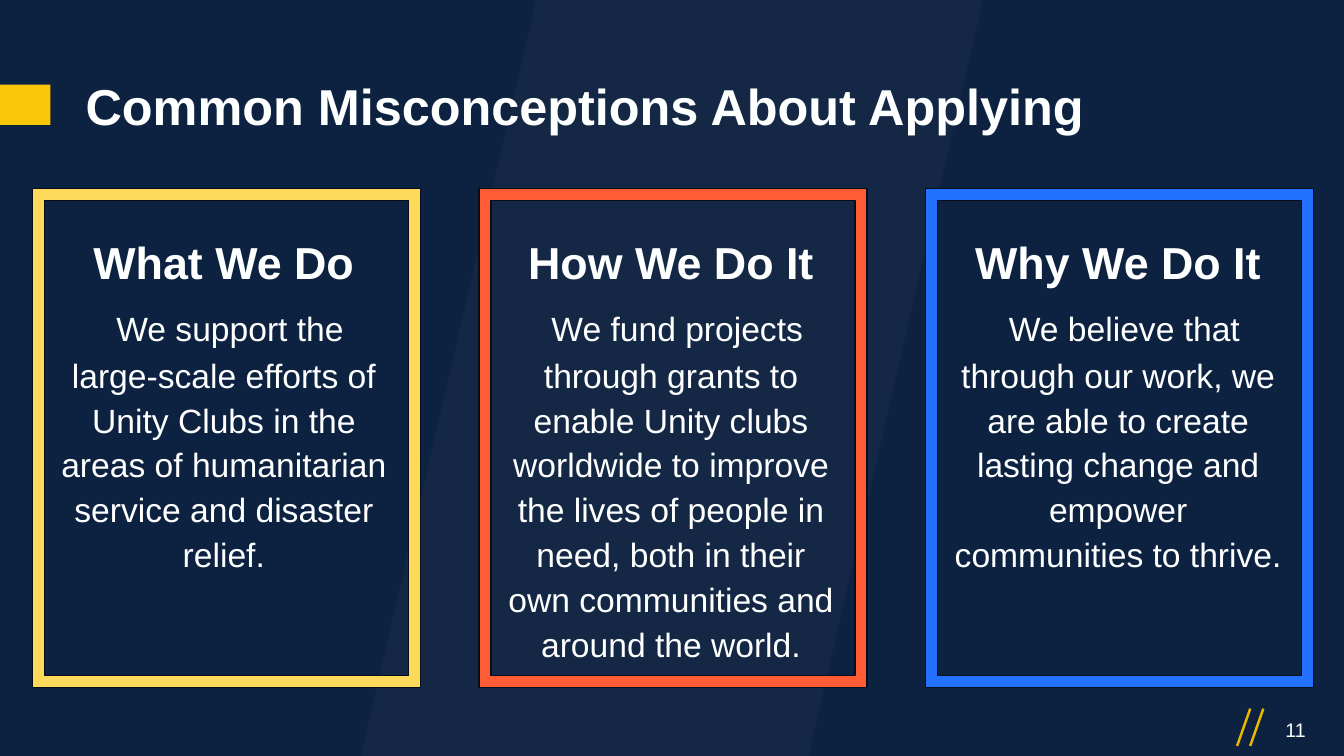
import pptx
import pptx.util
import pptx.dml.color
import pptx.enum.shapes
import pptx.enum.text
from pptx.oxml.ns import qn
from lxml import etree

# Content
TITLE = "Common Misconceptions About Applying"
PAGE_NUMBER = "11"
PILLARS = [
    ("What We Do", "yellow", 3.38,
     "We support the large-scale efforts of Unity Clubs in the areas of "
     "humanitarian service and disaster relief."),
    ("How We Do It", "orange", 4.27,
     "We fund projects through grants to enable Unity clubs worldwide to improve "
     "the lives of people in need, both in their own communities and around the world."),
    ("Why We Do It", "blue", 3.82,
     "We believe that through our work, we are able to create lasting change and "
     "empower communities to thrive."),
]

# Theme
THEME = {
    "font": "Arial",
    "colors": {"navy": "0D2140", "white": "FEFFFF", "gold": "FBC608", "slash": "EBB800",
               "edge": "060E1C", "yellow": "FFDA5A", "orange": "FF5B34", "blue": "2272FF"},
    "sizes": {"title": 36, "heading": 32, "body": 24, "page": 14},
}

# Layout, in inches
WIDTH, HEIGHT = 13.33, 7.5
FRAME_LEFT, FRAME_TOP, FRAME_WIDTH, FRAME_HEIGHT = 0.32, 1.87, 3.85, 4.95
FRAME_PITCH = (WIDTH - 2 * FRAME_LEFT - FRAME_WIDTH) / 2 + 0.01
COPY_LEFT, COPY_TOP, COPY_WIDTH, COPY_PITCH = 0.5, 2.37, 3.44, 4.435
BAND = [(5.32, 0), (9.75, 0), (8.02, HEIGHT), (3.58, HEIGHT)]
SLASH_TOP, SLASH_BOTTOM, SLASH_LEAN = 7.03, 7.4, 0.13
SLASH_HEADS = (12.53, 12.4)

inch, point = pptx.util.Inches, pptx.util.Pt
PRESET = pptx.enum.shapes.MSO_SHAPE
ALIGN = pptx.enum.text.PP_ALIGN
MIDDLE = pptx.enum.text.MSO_ANCHOR.MIDDLE


def color(name):
    return pptx.dml.color.RGBColor.from_string(THEME["colors"][name])


def paint(shape, fill, edge=None):
    shape.shadow.inherit = False
    shape.fill.solid()
    shape.fill.fore_color.rgb = color(fill)
    if edge:
        shape.line.color.rgb = color(edge)
        shape.line.width = point(1)
    else:
        shape.line.fill.background()


def add_box(slide, left, top, width, height, anchor=None):
    frame = slide.shapes.add_textbox(*map(inch, (left, top, width, height))).text_frame
    frame.word_wrap = True
    if anchor is not None:
        frame.vertical_anchor = anchor
    return frame


def add_run(paragraph, text, size, bold=False):
    run = paragraph.add_run()
    run.text = text
    style = {"name": THEME["font"], "size": point(THEME["sizes"][size]), "bold": bold}
    for key, value in style.items():
        setattr(run.font, key, value)
    run.font.color.rgb = color("white")


def add_backdrop(slide):
    slide.background.fill.solid()
    slide.background.fill.fore_color.rgb = color("navy")
    builder = slide.shapes.build_freeform(*map(inch, BAND[0]))
    builder.add_line_segments([tuple(map(inch, corner)) for corner in BAND[1:]])
    band = builder.convert_to_shape()
    paint(band, "white")
    tint = band.fill._xPr.find(".//" + qn("a:srgbClr"))
    etree.SubElement(tint, qn("a:alpha"), val="3000")


def add_footer(slide):
    for head in SLASH_HEADS:
        slash = slide.shapes.add_connector(
            pptx.enum.shapes.MSO_CONNECTOR.STRAIGHT, inch(head), inch(SLASH_TOP),
            inch(head - SLASH_LEAN), inch(SLASH_BOTTOM))
        slash.line.color.rgb = color("slash")
        slash.line.width = point(1.75)
        etree.SubElement(slash._element.spPr, qn("a:effectLst"))
    number = add_box(slide, 12.65, 7.04, 0.62, 0.4, MIDDLE)
    add_run(number.paragraphs[0], PAGE_NUMBER, "page")


def add_title(slide):
    marker = slide.shapes.add_shape(PRESET.RECTANGLE, *map(inch, (0, 0.84, 0.5, 0.4)))
    paint(marker, "gold")
    title = add_box(slide, 0.75, 0.8, 10.61, 0.49, MIDDLE)
    add_run(title.paragraphs[0], TITLE, "title", bold=True)


def add_pillar(slide, column, heading, hue, height, body):
    text = add_box(slide, COPY_LEFT + column * COPY_PITCH, COPY_TOP, COPY_WIDTH, height)
    text.auto_size = pptx.enum.text.MSO_AUTO_SIZE.SHAPE_TO_FIT_TEXT
    top_line, body_lines = text.paragraphs[0], text.add_paragraph()
    spacing = {"alignment": ALIGN.CENTER, "line_spacing": point(32), "space_after": point(12)}
    for paragraph in (top_line, body_lines):
        for key, value in spacing.items():
            setattr(paragraph, key, value)
    add_run(top_line, heading, "heading", bold=True)
    add_run(body_lines, " ", "heading", bold=True)
    add_run(body_lines, body, "body")

    border = slide.shapes.add_shape(
        PRESET.FRAME, inch(FRAME_LEFT + column * FRAME_PITCH), inch(FRAME_TOP),
        inch(FRAME_WIDTH), inch(FRAME_HEIGHT))
    border.adjustments[0] = 0.031
    paint(border, hue, "edge")


def main():
    deck = pptx.Presentation()
    deck.slide_width, deck.slide_height = inch(WIDTH), inch(HEIGHT)
    slide = deck.slides.add_slide(deck.slide_layouts[6])
    add_backdrop(slide)
    add_footer(slide)
    add_title(slide)
    for column, pillar in enumerate(PILLARS):
        add_pillar(slide, column, *pillar)
    deck.save("out.pptx")


if __name__ == "__main__":
    main()
